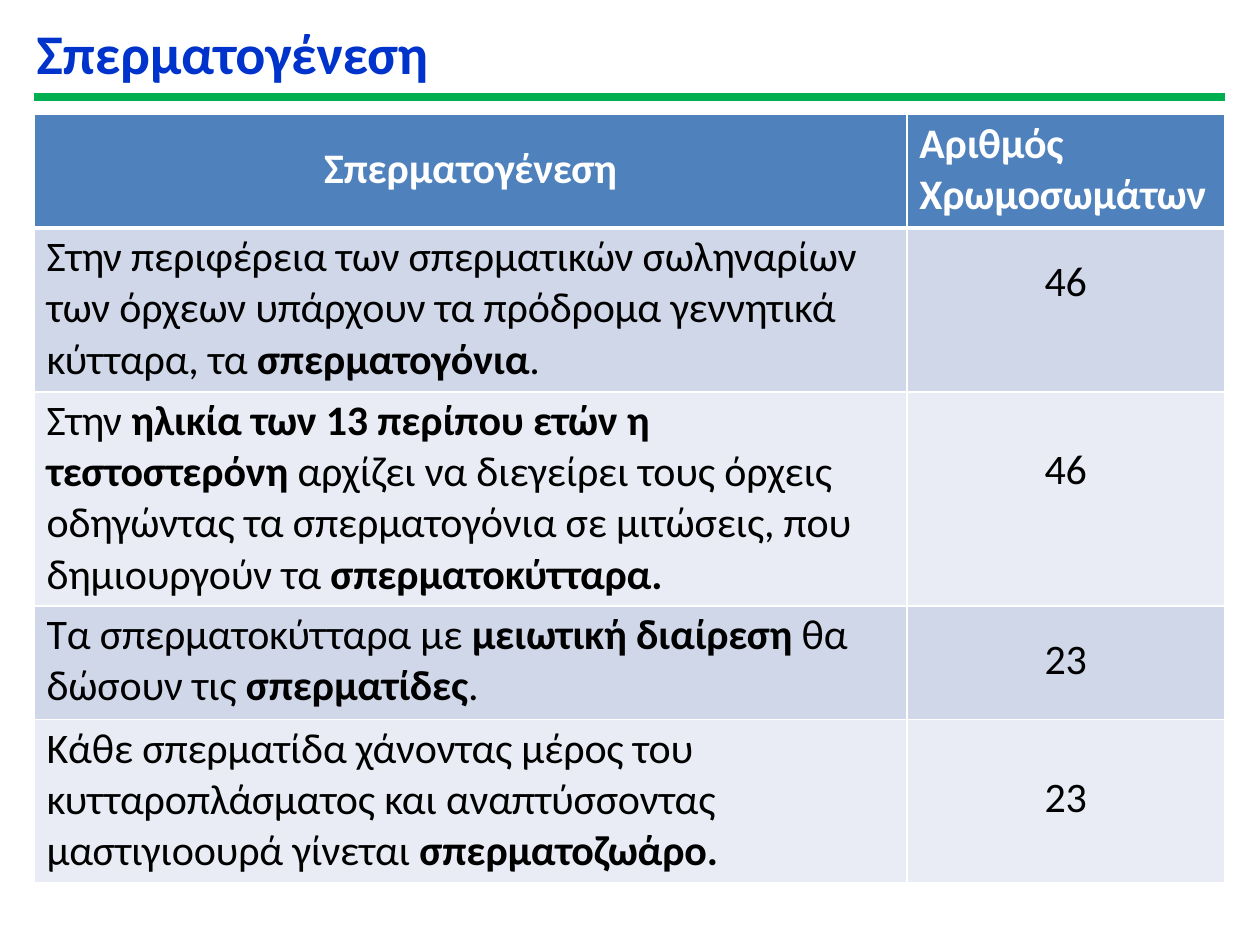
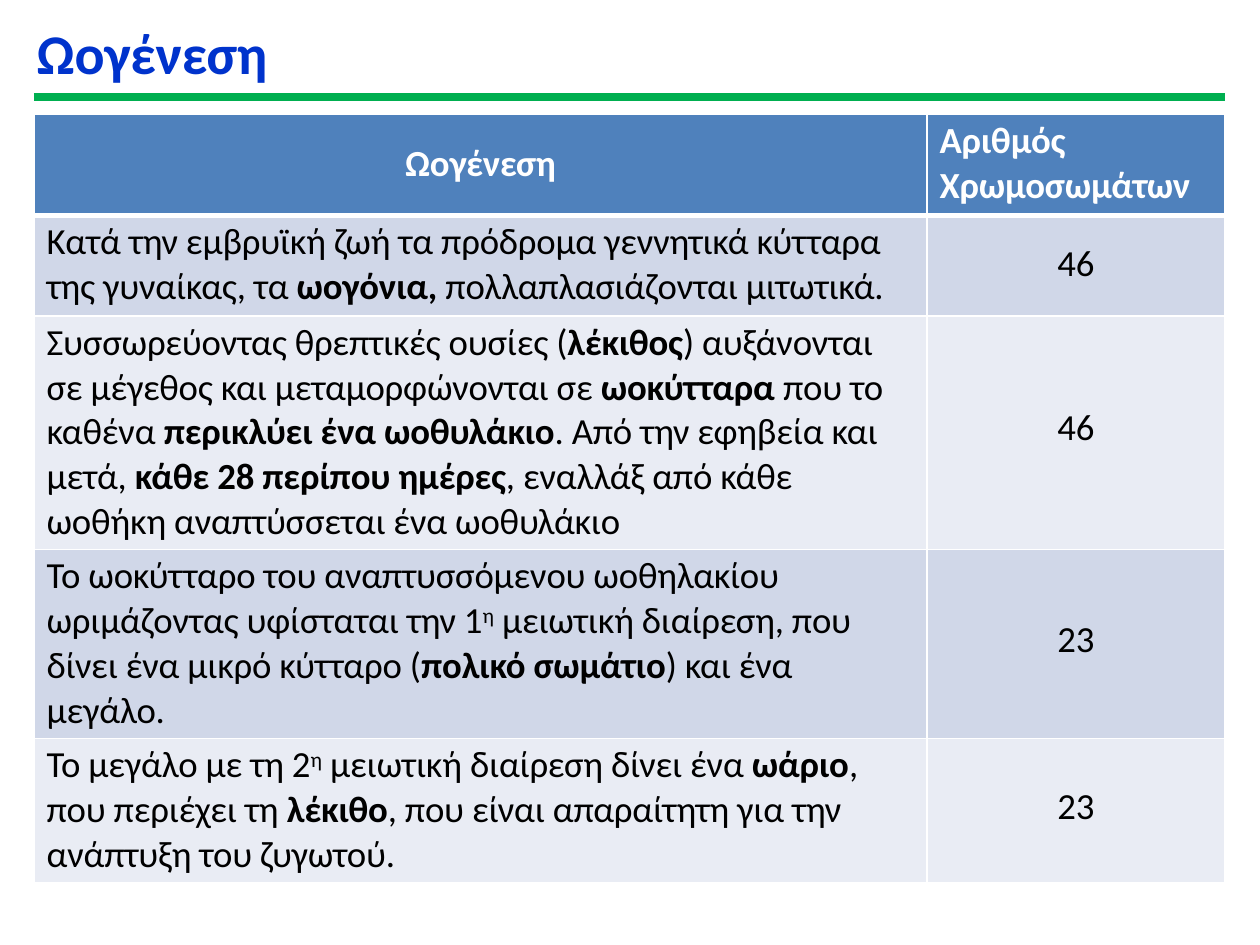
from dataclasses import dataclass

from lxml import etree
from pptx import Presentation
from pptx import util as u
from pptx.dml.color import RGBColor
from pptx.enum import shapes, text
from pptx.oxml.ns import qn

COLORS = {
    "title": "0033CC", "rule": "00AF50", "header": "4F81BC",
    "odd": "D0D7E8", "even": "E9ECF4", "white": "FFFFFF", "black": "000000",
}
FONT = "Calibri"
SLIDE_W, SLIDE_H = 10, 7.5

# Shared grid, in inches
LEFT, WIDTH = 0.27, 9.45
TITLE_TOP, RULE_Y, TABLE_TOP = 0.14, 0.77, 0.91
CELL_TOP, CELL_SIDE, WRAP_GAP = 0.03, 0.1, 0.2


@dataclass
class Stage:
    """A table row: *bold* and ^superscript^ are marked in the description."""
    description: str
    chromosomes: str
    height: float
    number_top: float


@dataclass
class Process:
    name: str
    size: float
    stage_share: float  # share of the table width
    header_height: float
    header_top: float
    stages: list[Stage]


PROCESSES = [
    Process("Σπερματογένεση", 24, 0.733, 0.9, 0.23, [
        Stage("Στην περιφέρεια των σπερματικών σωληναρίων των όρχεων υπάρχουν "
              "τα πρόδρομα γεννητικά κύτταρα, τα *σπερματογόνια*.",
              "46", 1.3, 0.23),
        Stage("Στην *ηλικία των 13 περίπου ετών η τεστοστερόνη* αρχίζει να "
              "διεγείρει τους όρχεις οδηγώντας τα σπερματογόνια σε μιτώσεις, "
              "που δημιουργούν τα *σπερματοκύτταρα.*", "46", 1.7, 0.42),
        Stage("Τα σπερματοκύτταρα με *μειωτική διαίρεση* θα δώσουν τις "
              "*σπερματίδες*.", "23", 0.9, 0.23),
        Stage("Κάθε σπερματίδα χάνοντας μέρος του κυτταροπλάσματος και "
              "αναπτύσσοντας μαστιγιοουρά γίνεται *σπερματοζωάρο.*",
              "23", 1.3, 0.42),
    ]),
    Process("Ωογένεση", 21, 0.75, 0.8, 0.21, [
        Stage("Κατά την εμβρυϊκή ζωή τα πρόδρομα γεννητικά κύτταρα της "
              "γυναίκας, τα *ωογόνια,* πολλαπλασιάζονται μιτωτικά.",
              "46", 0.8, 0.21),
        Stage("Συσσωρεύοντας θρεπτικές ουσίες (*λέκιθος*) αυξάνονται σε "
              "μέγεθος και μεταμορφώνονται σε *ωοκύτταρα* που το καθένα "
              "*περικλύει ένα ωοθυλάκιο*. Από την εφηβεία και μετά, *κάθε 28 "
              "περίπου ημέρες*, εναλλάξ από κάθε ωοθήκη αναπτύσσεται ένα "
              "ωοθυλάκιο", "46", 1.85, 0.71),
        Stage("Το ωοκύτταρο του αναπτυσσόμενου ωοθηλακίου ωριμάζοντας "
              "υφίσταται την 1^η^ μειωτική διαίρεση, που δίνει ένα μικρό "
              "κύτταρο (*πολικό σωμάτιο*) και ένα μεγάλο.", "23", 1.5, 0.54),
        Stage("Το μεγάλο με τη 2^η^ μειωτική διαίρεση δίνει ένα *ωάριο*, που "
              "περιέχει τη *λέκιθο*, που είναι απαραίτητη για την ανάπτυξη "
              "του ζυγωτού.", "23", 1.15, 0.37),
    ]),
]


def rgb(name: str) -> RGBColor:
    return RGBColor.from_string(COLORS[name])


def write(frame, words: str, *, size: float, color: str, bold: bool = False,
          centered: bool = False) -> None:
    """Fill a text frame, turning marked parts into bold or superscript."""
    line = frame.paragraphs[0]
    line.alignment = text.PP_ALIGN.CENTER if centered else text.PP_ALIGN.LEFT
    for i, part in enumerate(words.split("*")):
        for j, piece in enumerate(part.split("^")):
            if not piece:
                continue
            run = line.add_run()
            run.text = piece
            run.font.name, run.font.size = FONT, u.Pt(size)
            run.font.bold = bold or i % 2 == 1
            run.font.color.rgb = rgb(color)
            properties = run.font._element
            properties.set("spc", "-10")
            if j % 2:
                properties.set("baseline", "26000")


def set_borders(cell, **widths: float) -> None:
    """Draw white cell borders, 1 pt wide unless a side says otherwise."""
    properties = cell._tc.get_or_add_tcPr()
    for side in "LRTB":
        border = etree.SubElement(properties, qn(f"a:ln{side}"),
                                  w=str(u.Pt(widths.get(side, 1))))
        fill = etree.SubElement(border, qn("a:solidFill"))
        etree.SubElement(fill, qn("a:srgbClr"), val=COLORS["white"])


def format_cell(cell, words: str, *, fill: str, top: float = CELL_TOP,
                left: float = 0, right: float = 0, borders: dict[str, float],
                **style) -> None:
    cell.margin_left, cell.margin_right = u.Inches(left), u.Inches(right)
    cell.margin_top, cell.margin_bottom = u.Inches(top), 0
    cell.vertical_anchor = text.MSO_ANCHOR.TOP
    set_borders(cell, **borders)
    cell.fill.solid()
    cell.fill.fore_color.rgb = rgb(fill)
    write(cell.text_frame, words, **style)


def add_heading(slide, name: str) -> None:
    """Title with the green rule under it."""
    title = slide.shapes.title
    title.left, title.top = u.Inches(LEFT + 0.02), u.Inches(TITLE_TOP)
    title.width, title.height = u.Inches(WIDTH), u.Inches(0.56)
    frame = title.text_frame
    frame.margin_left = frame.margin_right = frame.margin_bottom = 0
    frame.margin_top = u.Inches(0.01)
    frame.vertical_anchor = text.MSO_ANCHOR.TOP
    frame.auto_size = text.MSO_AUTO_SIZE.NONE
    write(frame, name, size=32, color="title", bold=True)

    rule = slide.shapes.add_connector(
        shapes.MSO_CONNECTOR.STRAIGHT, u.Inches(LEFT), u.Inches(RULE_Y),
        u.Inches(LEFT + WIDTH), u.Inches(RULE_Y))
    rule.line.color.rgb = rgb("rule")
    rule.line.width = u.Pt(4.56)
    etree.SubElement(rule._element.spPr, qn("a:effectLst"))


def add_stage_table(slide, process: Process) -> None:
    heights = [process.header_height] + [s.height for s in process.stages]
    table = slide.shapes.add_table(
        len(heights), 2, u.Inches(LEFT), u.Inches(TABLE_TOP),
        u.Inches(WIDTH), u.Inches(sum(heights))).table
    table.horz_banding = False
    for column, share in zip(table.columns,
                             (process.stage_share, 1 - process.stage_share)):
        column.width = u.Inches(WIDTH * share)
    for row, height in zip(table.rows, heights):
        row.height = u.Inches(height)

    # Header row
    header = dict(fill="header", size=process.size, color="white", bold=True,
                  borders={"B": 3})
    format_cell(table.cell(0, 0), process.name, top=process.header_top,
                centered=True, **header)
    format_cell(table.cell(0, 1), "Αριθμός Χρωμοσωμάτων", left=CELL_SIDE,
                **header)

    # Stage rows
    for number, stage in enumerate(process.stages, start=1):
        body = dict(fill="odd" if number % 2 else "even", size=process.size,
                    color="black", borders={"T": 3} if number == 1 else {})
        format_cell(table.cell(number, 0), stage.description, left=CELL_SIDE,
                    right=WRAP_GAP, **body)
        format_cell(table.cell(number, 1), stage.chromosomes,
                    top=stage.number_top, centered=True, **body)


def main() -> None:
    deck = Presentation()
    deck.slide_width, deck.slide_height = u.Inches(SLIDE_W), u.Inches(SLIDE_H)
    title_only = deck.slide_layouts[5]
    for process in PROCESSES:
        slide = deck.slides.add_slide(title_only)
        add_heading(slide, process.name)
        add_stage_table(slide, process)
    deck.save("out.pptx")


if __name__ == "__main__":
    main()
